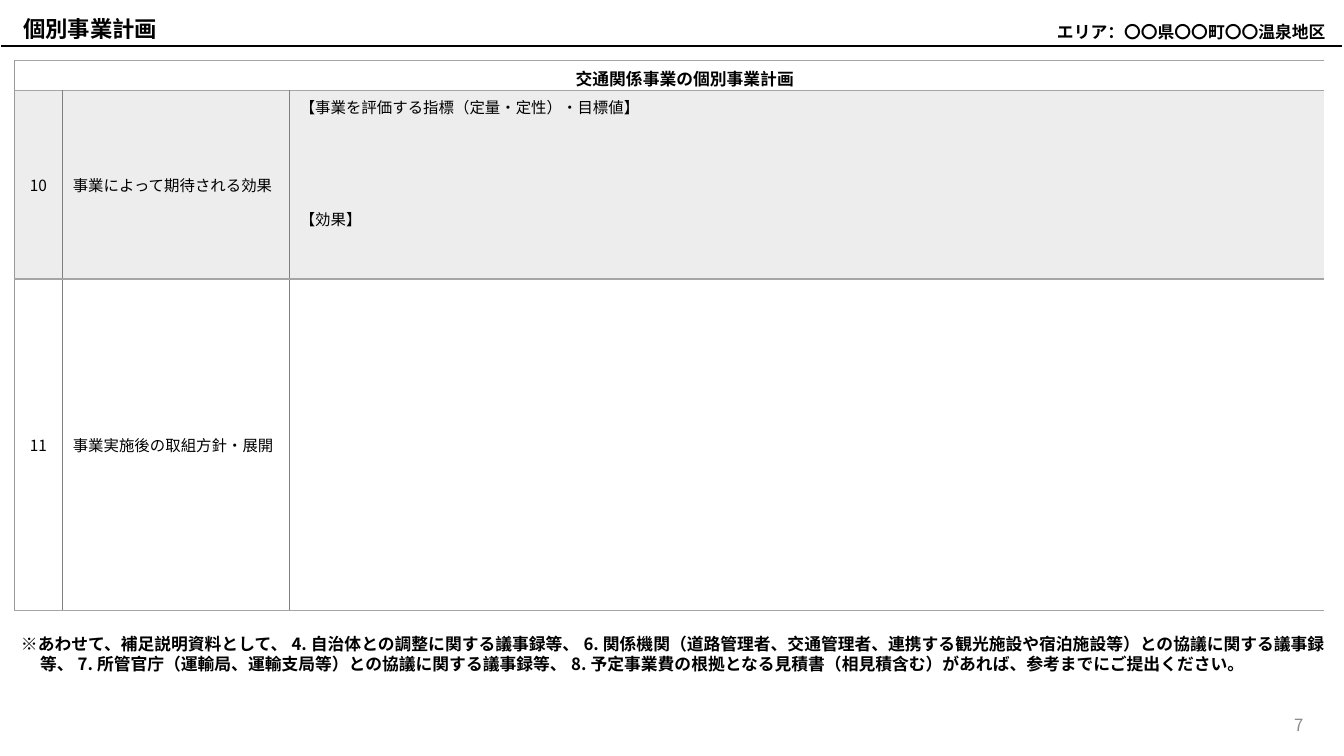
from lxml import etree
from pptx import Presentation
from pptx import util as u
from pptx.dml.color import RGBColor
from pptx.enum import shapes, text
from pptx.oxml.ns import qn

FONT = "Noto Sans CJK JP"
BLACK, GRAY, SHADE = "000000", "8C8C8C", "EDEDED"
OUTER, EDGE, INNER = ("A5A5A5", 1), ("999999", 0.5), ("808080", 0.5)
NO_GRID_STYLE = "{2D5ABB26-0587-4C30-8999-92F81FD0307C}"
ALIGN, ANCHOR = text.PP_ALIGN, text.MSO_ANCHOR

# Content
HEADING = "個別事業計画"
AREA = "エリア：〇〇県〇〇町〇〇温泉地区"
PAGE = "7"
NOTE = ("※あわせて、補足説明資料として、4.自治体との調整に関する議事録等、"
        "6.関係機関（道路管理者、交通管理者、連携する観光施設や宿泊施設等）との協議に関する議事録等、"
        "7.所管官庁（運輸局、運輸支局等）との協議に関する議事録等、"
        "8.予定事業費の根拠となる見積書（相見積含む）があれば、参考までにご提出ください。")
PLAN_HEADING = "交通関係事業の個別事業計画　"
PLAN_ITEMS = [
    ("10", "事業によって期待される効果",
     ["【事業を評価する指標（定量・定性）・目標値】", "【効果】"], SHADE),
    ("11", "事業実施後の取組方針・展開", [], None),
]
COLUMN_WIDTHS = (1.22, 5.72, 26.06)
ROW_HEIGHTS = (0.76, 4.75, 8.36)


def color(value):
    return RGBColor.from_string(value)


def write(frame, *lines, size=12, bold=False, fill=BLACK, align=ALIGN.LEFT,
          spacing=1.0, gap=0, hanging=0):
    for index, line in enumerate(lines):
        para = frame.add_paragraph() if index else frame.paragraphs[0]
        para.alignment, para.line_spacing = align, spacing
        para.space_before = u.Pt(gap if index else 0)
        if hanging:
            props = para._p.get_or_add_pPr()
            props.set("marL", str(u.Cm(hanging)))
            props.set("indent", str(-u.Cm(hanging)))
        run = para.add_run()
        run.text = line
        run.font.size, run.font.bold, run.font.name = u.Pt(size), bold, FONT
        run.font.color.rgb = color(fill)
        etree.SubElement(run._r.get_or_add_rPr(), qn("a:ea"), typeface=FONT)


def add_text(line, left, top, width, height, anchor=ANCHOR.TOP, **fmt):
    box = slide.shapes.add_textbox(*map(u.Cm, (left, top, width, height)))
    box.text_frame.word_wrap = True
    box.text_frame.vertical_anchor = anchor
    write(box.text_frame, line, **fmt)


def set_borders(cell, **sides):
    """Draw the given sides (L, R, T, B), each a colour and a width."""
    props = cell._tc.get_or_add_tcPr()
    for position, side in enumerate(s for s in "LRTB" if s in sides):
        line_color, width = sides[side]
        border = etree.Element(qn("a:ln" + side), w=str(u.Pt(width)))
        solid = etree.SubElement(border, qn("a:solidFill"))
        etree.SubElement(solid, qn("a:srgbClr"), val=line_color)
        props.insert(position, border)


deck = Presentation()
deck.slide_width, deck.slide_height = u.Cm(33.87), u.Cm(19.05)
slide = deck.slides.add_slide(deck.slide_layouts[5])

# Heading and rule
heading = slide.shapes.title
heading.left, heading.top, heading.width, heading.height = map(
    u.Cm, (0.33, 0.25, 33.02, 0.94))
heading.text_frame.vertical_anchor = ANCHOR.MIDDLE
write(heading.text_frame, HEADING, size=16, bold=True)

rule = slide.shapes.add_connector(shapes.MSO_CONNECTOR.STRAIGHT,
                                  u.Cm(0.03), u.Cm(1.17), u.Cm(33.83), u.Cm(1.17))
rule.line.color.rgb, rule.line.width = color(BLACK), u.Pt(1.5)
etree.SubElement(rule._element.spPr, qn("a:effectLst"))

# Plan table
plan_frame = slide.shapes.add_table(
    len(ROW_HEIGHTS), len(COLUMN_WIDTHS), u.Cm(0.36), u.Cm(1.52),
    u.Cm(sum(COLUMN_WIDTHS)), u.Cm(sum(ROW_HEIGHTS)))
plan = plan_frame.table
plan.first_row = plan.horz_banding = False
plan._tbl.tblPr.find(qn("a:tableStyleId")).text = NO_GRID_STYLE
for column, width in zip(plan.columns, COLUMN_WIDTHS):
    column.width = u.Cm(width)
for row, height in zip(plan.rows, ROW_HEIGHTS):
    row.height = u.Cm(height)

# Table heading row
plan.cell(0, 1).merge(plan.cell(0, 2))
for cell in plan.rows[0].cells:
    cell.fill.background()
    cell.margin_top, cell.margin_bottom = u.Cm(0.13), u.Cm(0)
    cell.vertical_anchor = ANCHOR.MIDDLE
    cell.text_frame.paragraphs[0].font.size = u.Pt(12)
write(plan.cell(0, 1).text_frame, PLAN_HEADING, bold=True, align=ALIGN.CENTER)
set_borders(plan.cell(0, 0), L=EDGE, T=OUTER, B=OUTER)
for column in (1, 2):
    set_borders(plan.cell(0, column), T=OUTER, B=OUTER)

# Item rows
for row, (number, item, details, shade) in enumerate(PLAN_ITEMS, start=1):
    number_cell, item_cell, detail_cell = plan.rows[row].cells
    write(number_cell.text_frame, number, size=11, align=ALIGN.CENTER)
    write(item_cell.text_frame, item, size=11)
    write(detail_cell.text_frame, *details, size=11, gap=64)
    for cell in (number_cell, item_cell, detail_cell):
        cell.vertical_anchor = ANCHOR.TOP if cell is detail_cell else ANCHOR.MIDDLE
        if shade:
            cell.fill.solid()
            cell.fill.fore_color.rgb = color(shade)
        else:
            cell.fill.background()
    ends = {"T": OUTER} if row == 1 else {}
    if row == len(PLAN_ITEMS):
        ends["B"] = OUTER
    set_borders(number_cell, L=EDGE, R=INNER, **ends)
    set_borders(item_cell, L=INNER, R=INNER, **ends)
    set_borders(detail_cell, L=INNER, **ends)

# Page number, area and note
add_text(PAGE, 25.48, 17.75, 7.62, 1.02, anchor=ANCHOR.MIDDLE, fill=GRAY,
         align=ALIGN.RIGHT)
add_text(AREA, 25.2, 0.18, 8.46, 0.97, bold=True, align=ALIGN.RIGHT, spacing=1.5)
add_text(NOTE, 0.28, 15.85, 33.4, 1.27, bold=True, hanging=0.48)

deck.save("out.pptx")
